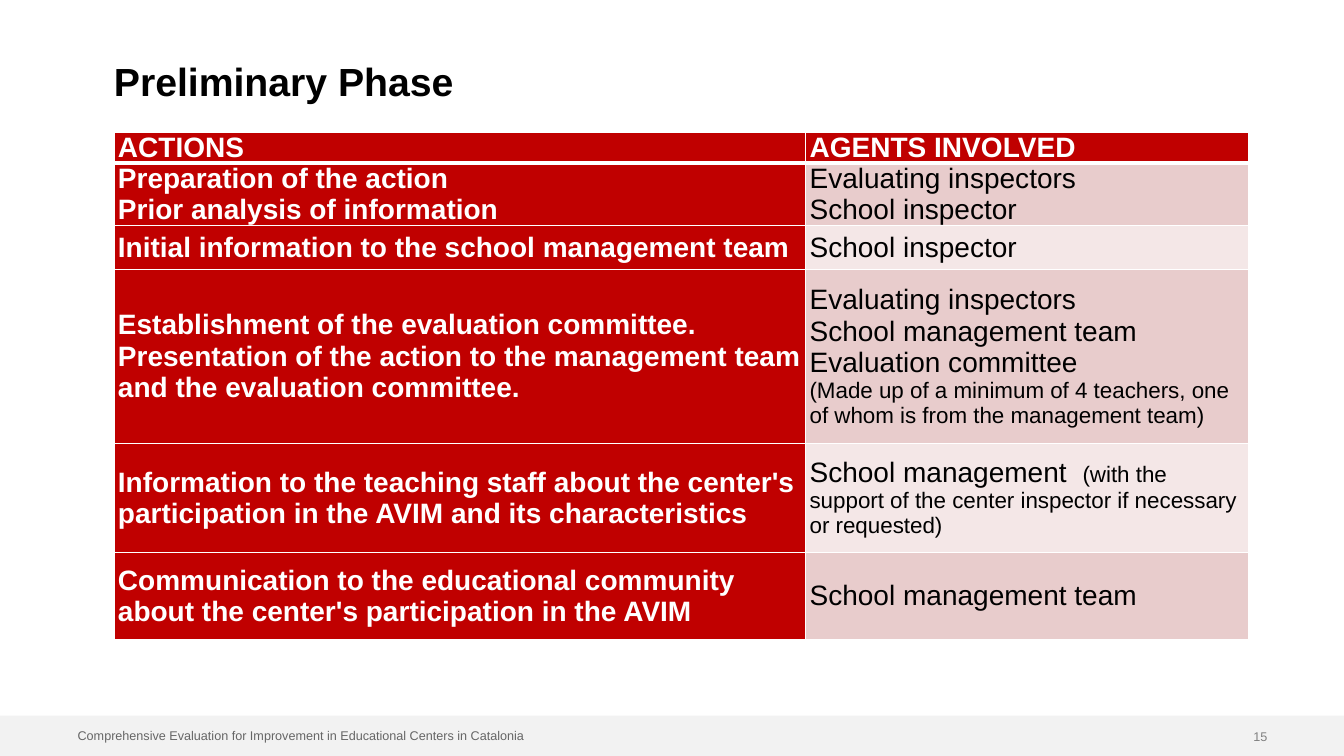
from lxml import etree
from pptx import Presentation
from pptx import util as u
from pptx.dml.color import RGBColor
from pptx.enum import shapes, text
from pptx.oxml import ns

RED = RGBColor(0xC0, 0x00, 0x00)
ROSE = RGBColor(0xE8, 0xCC, 0xCC)
BLUSH = RGBColor(0xF4, 0xE7, 0xE7)
WHITE = RGBColor(0xFF, 0xFF, 0xFF)
BLACK = RGBColor(0x00, 0x00, 0x00)
LIGHT_GREY = RGBColor(0xF2, 0xF2, 0xF2)
MID_GREY = RGBColor(0x80, 0x80, 0x80)
DARK_GREY = RGBColor(0x66, 0x66, 0x66)

HEADINGS = ["ACTIONS", "AGENTS INVOLVED"]
# Each row: height, actions, agents; an agent line is a list of (words, size)
PHASES = [
    (0.43, ["Preparation of the action", "Prior analysis of information"],
     [[("Evaluating inspectors", 20)], [("School inspector", 20)]]),
    (0.43, ["Initial information to the school management team"],
     [[("School inspector", 20)]]),
    (1.73, ["Establishment of the evaluation committee.",
            "Presentation of the action to the management team and the evaluation committee."],
     [[("Evaluating inspectors", 20)], [("School management team", 20)],
      [("Evaluation committee", 20)],
      [("(Made up of a minimum of 4 teachers, one of whom is from the management team)", 16)]]),
    (1.08, ["Information to the teaching staff about the center's participation "
            "in the AVIM and its characteristics"],
     [[("School management  ", 20),
       ("(with the support of the center inspector if necessary or requested)", 16)]]),
    (0.87, ["Communication to the educational community about the center's "
            "participation in the AVIM"],
     [[("School management team", 20)]]),
]


class Page:
    font = "Arial"

    def __init__(self, deck):
        self.slide = deck.slides.add_slide(deck.slide_layouts[1])
        self.shapes = self.slide.shapes

    def style(self, target, **values):
        for name, value in values.items():
            setattr(target, name, value)

    def fill_text(self, frame, lines, color, bold=False, **para_values):
        """Fill a text frame with lines made of (words, size) spans."""
        for index, line in enumerate(lines):
            para = frame.add_paragraph() if index else frame.paragraphs[0]
            self.style(para, **para_values)
            for words, size in line:
                span = para.add_run()
                span.text = words
                self.style(span.font, name=self.font, size=u.Pt(size), bold=bold)
                span.font.color.rgb = color

    def label(self, box, place, words, size, color, bold=False,
              align=text.PP_ALIGN.LEFT):
        left, top, width, height = map(u.Inches, place)
        self.style(box, left=left, top=top, width=width, height=height)
        self.style(box.text_frame, margin_left=0, margin_top=0, margin_right=0,
                   margin_bottom=0, word_wrap=True, auto_size=text.MSO_AUTO_SIZE.NONE,
                   vertical_anchor=text.MSO_ANCHOR.MIDDLE)
        self.fill_text(box.text_frame, [[(words, size)]], color, bold,
                       alignment=align, line_spacing=0.9, space_before=u.Pt(0))

    def title(self, place, words):
        self.label(self.shapes.title, place, words, 28, BLACK, bold=True)

    def footer(self, place, words):
        box = self.slide.placeholders[1]
        props = box.text_frame.paragraphs[0]._p.get_or_add_pPr()
        props.set("marL", "0")
        props.set("indent", "0")
        etree.SubElement(props, ns.qn("a:buNone"))
        self.label(box, place, words, 9, DARK_GREY)

    def number(self, place, words):
        box = self.shapes.add_textbox(0, 0, 0, 0)
        self.label(box, place, words, 9, MID_GREY, align=text.PP_ALIGN.RIGHT)

    def band(self, place, color):
        box = self.shapes.add_shape(shapes.MSO_SHAPE.RECTANGLE, *map(u.Inches, place))
        box.shadow.inherit = False
        box.fill.solid()
        box.fill.fore_color.rgb = color
        box.line.fill.background()
        self.shapes._spTree.insert(2, box._element)  # behind the footer text

    def borders(self, cell, bottom):
        props = cell._tc.get_or_add_tcPr()
        widths = {"lnL": 1, "lnR": 1, "lnT": 1, "lnB": bottom}
        for index, (side, width) in enumerate(widths.items()):
            line = etree.Element(ns.qn("a:" + side), w=str(u.Pt(width)))
            fill = etree.SubElement(line, ns.qn("a:solidFill"))
            etree.SubElement(fill, ns.qn("a:srgbClr"), val=str(WHITE))
            props.insert(index, line)

    def cell(self, cell, lines, fill, color, bold, anchor, bottom=1):
        self.style(cell, margin_left=u.Inches(0.04), margin_right=u.Inches(0.04),
                   margin_top=0, margin_bottom=0, vertical_anchor=anchor)
        cell.fill.solid()
        cell.fill.fore_color.rgb = fill
        self.borders(cell, bottom)
        self.fill_text(cell.text_frame, lines, color, bold)

    def table(self, place, widths, headings, heading_height, phases):
        frame = self.shapes.add_table(len(phases) + 1, len(widths), *map(u.Inches, place))
        table = frame.table
        table.horz_banding = False
        for column, width in zip(table.columns, widths):
            column.width = u.Inches(width)
        table.rows[0].height = u.Inches(heading_height)
        for index, heading in enumerate(headings):
            self.cell(table.cell(0, index), [[(heading, 20)]], RED, WHITE, True,
                      text.MSO_ANCHOR.TOP, bottom=3)
        for row, (height, actions, agents) in enumerate(phases, 1):
            table.rows[row].height = u.Inches(height)
            middle = text.MSO_ANCHOR.MIDDLE
            self.cell(table.cell(row, 0), [[(action, 20)] for action in actions],
                      RED, WHITE, True, middle)
            self.cell(table.cell(row, 1), agents, ROSE if row % 2 else BLUSH,
                      BLACK, False, middle)
        frame.height = u.Inches(place[3])


def main():
    deck = Presentation()
    deck.slide_width, deck.slide_height = u.Inches(13.33), u.Inches(7.5)
    page = Page(deck)

    # Heading and table
    page.title((1.13, 0.6, 11.77, 0.47), "Preliminary Phase")
    page.table((1.13, 1.31, 11.26, 5.11), (6.86, 4.39), HEADINGS, 0.22, PHASES)

    # Footer
    page.band((0, 7.1, 13.33, 0.4), LIGHT_GREY)
    page.footer((0.77, 7.25, 5.29, 0.12),
                "Comprehensive Evaluation for Improvement in Educational Centers in Catalonia")
    page.number((10.67, 7.25, 1.9, 0.13), "15")

    deck.save("out.pptx")


if __name__ == "__main__":
    main()
